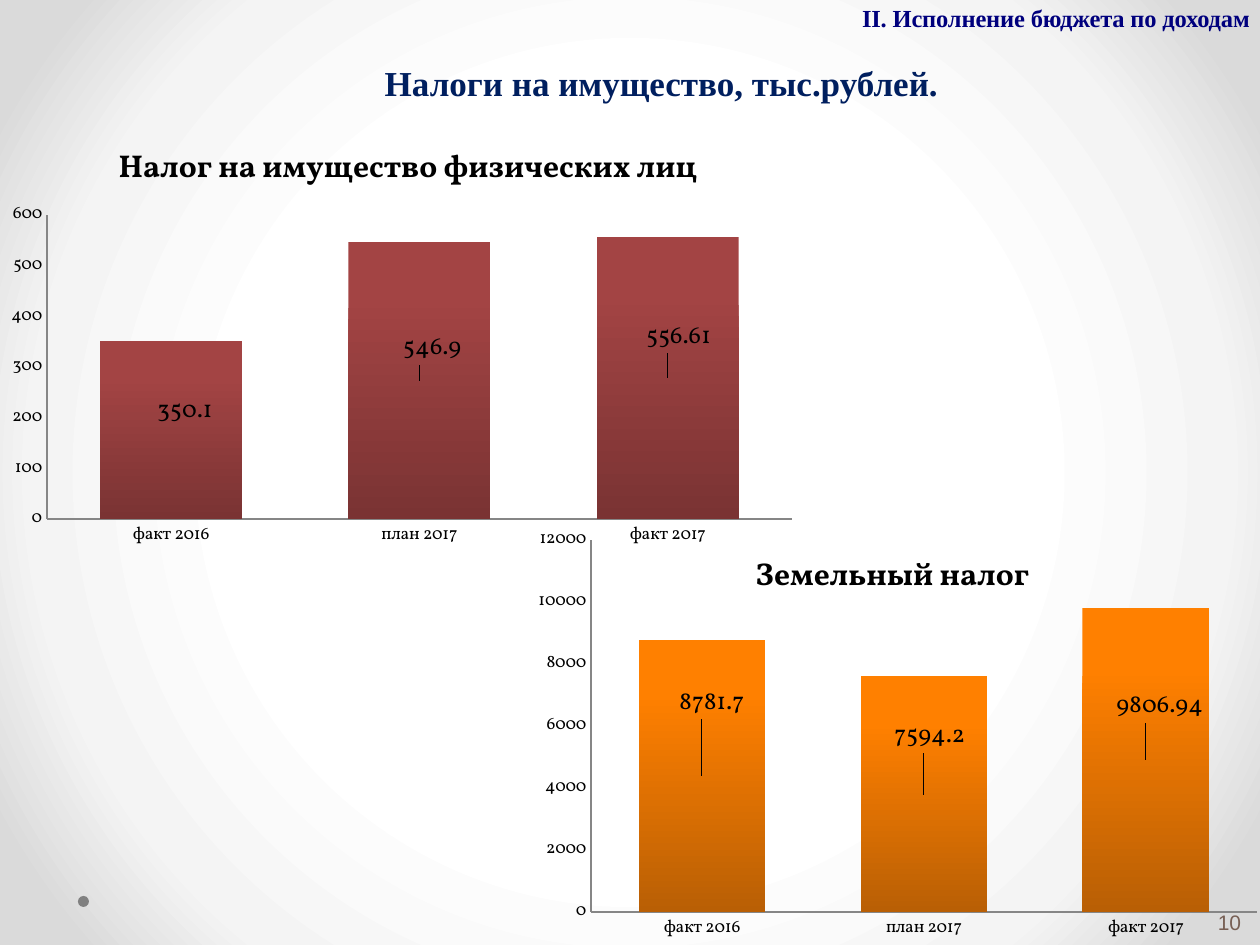
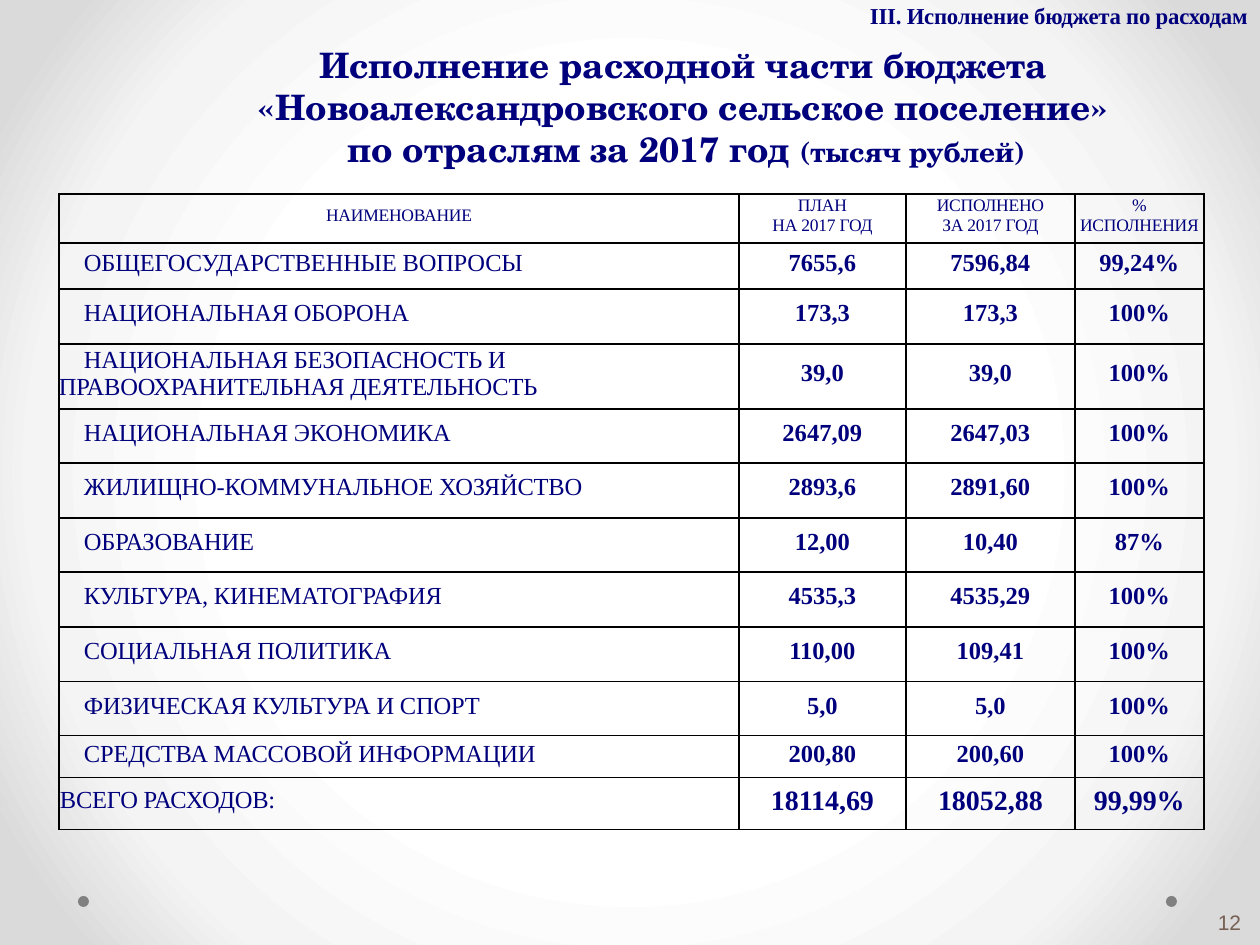
from dataclasses import dataclass

from pptx import Presentation
from pptx.chart.data import CategoryChartData
from pptx.dml.color import RGBColor
from pptx.enum.chart import XL_CHART_TYPE as ChartType, XL_LABEL_POSITION as LabelPosition
from pptx.enum.chart import XL_TICK_MARK as TickMark
from pptx.enum.shapes import MSO_SHAPE as Shape
from pptx.enum.text import MSO_ANCHOR as Anchor, MSO_AUTO_SIZE as AutoSize, PP_ALIGN as Align
from pptx.oxml import parse_xml
from pptx.oxml.ns import nsdecls
from pptx.util import Emu, Pt

TITLE_ONLY = 5


@dataclass(frozen=True)
class Theme:
    """Colours, fonts and type sizes of the deck."""
    navy: str = "00007D"
    title_blue: str = "001F5F"
    brown: str = "775F54"
    grey: str = "808080"
    axis: str = "868686"
    black: str = "000000"
    red_bar: tuple = ("A34444", "7A3333")
    orange_bar: tuple = ("FF8000", "B95F05")
    glow: tuple = ((50, "FFFFFF"), (76, "F4F4F4"), (92, "DADADA"))
    serif: str = "Times New Roman"
    school: str = "TeX Gyre Schola"
    chart_font: str = "Vollkorn"
    sans: str = "Arial"
    title: int = 20
    chart_title: int = 18
    large: int = 16
    body: int = 14
    section: int = 13
    page: int = 12
    small: int = 10


THEME = Theme()

YEARS = ("факт 2016", "план 2017", "факт 2017")
HEADINGS = ("НАИМЕНОВАНИЕ", "ПЛАН\nНА 2017 ГОД", "ИСПОЛНЕНО\nЗА 2017 ГОД", "%\nИСПОЛНЕНИЯ")
EXPENSES = (
    ("ОБЩЕГОСУДАРСТВЕННЫЕ ВОПРОСЫ", "7655,6", "7596,84", "99,24%"),
    ("НАЦИОНАЛЬНАЯ ОБОРОНА", "173,3", "173,3", "100%"),
    ("НАЦИОНАЛЬНАЯ БЕЗОПАСНОСТЬ И\nПРАВООХРАНИТЕЛЬНАЯ ДЕЯТЕЛЬНОСТЬ", "39,0", "39,0", "100%"),
    ("НАЦИОНАЛЬНАЯ ЭКОНОМИКА", "2647,09", "2647,03", "100%"),
    ("ЖИЛИЩНО-КОММУНАЛЬНОЕ ХОЗЯЙСТВО", "2893,6", "2891,60", "100%"),
    ("ОБРАЗОВАНИЕ", "12,00", "10,40", "87%"),
    ("КУЛЬТУРА, КИНЕМАТОГРАФИЯ", "4535,3", "4535,29", "100%"),
    ("СОЦИАЛЬНАЯ ПОЛИТИКА", "110,00", "109,41", "100%"),
    ("ФИЗИЧЕСКАЯ КУЛЬТУРА И СПОРТ", "5,0", "5,0", "100%"),
    ("СРЕДСТВА МАССОВОЙ ИНФОРМАЦИИ", "200,80", "200,60", "100%"),
)
TOTAL = ("ВСЕГО РАСХОДОВ:", "18114,69", "18052,88", "99,99%")
COLUMN_WIDTHS = (680, 167, 169, 129)
ROW_HEIGHTS = (49, 46, 55, 65, 54, 55, 54, 55, 55, 54, 42, 52)


def px(length):
    """Turn pixels, 126 to the inch, into EMU."""
    return Emu(round(length * 914400 / 126))


def place(box):
    """Turn a pixel box into EMU."""
    return [px(length) for length in box]


def write(para, text, size=THEME.body, color=THEME.navy, font=THEME.serif, bold=False,
          align=None, left=0, first=0, track=0):
    """Add text to a paragraph, a newline being a line break."""
    if align is not None:
        para.alignment = align
    if left or first:
        properties = para._p.get_or_add_pPr()
        properties.set("marL", str(px(left)))
        properties.set("indent", str(px(first)))
    for number, line in enumerate(text.split("\n")):
        if number:
            para.add_line_break()
        span = para.add_run()
        span.text = line
        span.font.size = Pt(size)
        span.font.name = font
        span.font.bold = bold
        span.font.color.rgb = RGBColor.from_string(color)
        if track:
            span._r.get_or_add_rPr().set("spc", str(track))


def prepare_frame(frame, wrap=False, anchor=Anchor.TOP):
    """Clear the margins of a text frame and return its first paragraph."""
    frame.margin_left = frame.margin_right = frame.margin_top = frame.margin_bottom = 0
    frame.auto_size = AutoSize.NONE
    frame.word_wrap = wrap
    frame.vertical_anchor = anchor
    return frame.paragraphs[0]


def add_label(page, box, text, **style):
    """Add a one-line text box."""
    write(prepare_frame(page.shapes.add_textbox(*place(box)).text_frame), text, **style)


def place_title(page, box, wrap=False):
    """Move the title placeholder and return its text frame."""
    title = page.shapes.title
    title.left, title.top, title.width, title.height = place(box)
    prepare_frame(title.text_frame, wrap, Anchor.BOTTOM)
    return title.text_frame


def paint_background(master):
    """Give the master a round glow."""
    master.background.fill.gradient()
    old = master.element.xpath("p:cSld/p:bg/p:bgPr/a:gradFill")[0]
    stops = "".join(f'<a:gs pos="{at * 1000}"><a:srgbClr val="{color}"/></a:gs>'
                    for at, color in THEME.glow)
    glow = parse_xml(f'<a:gradFill {nsdecls("a")} rotWithShape="1"><a:gsLst>{stops}</a:gsLst>'
                     '<a:path path="circle"><a:fillToRect l="50000" t="50000" r="50000" '
                     'b="50000"/></a:path></a:gradFill>')
    old.getparent().replace(old, glow)


def add_page(deck, section, section_box, section_size, number):
    """Add a slide with its section name, corner dots and page number."""
    page = deck.slides.add_slide(deck.slide_layouts[TITLE_ONLY])
    for left in (1166, 78):
        dot = page.shapes.add_shape(Shape.OVAL, *place((left, 896, 11, 11)))
        dot.shadow.inherit = False
        dot.fill.solid()
        dot.fill.fore_color.rgb = RGBColor.from_string(THEME.grey)
        dot.line.fill.background()
    add_label(page, section_box, section, size=section_size, bold=True, track=-10)
    add_label(page, (1218, 910, 26, 29), number, size=THEME.page, color=THEME.brown,
              font=THEME.sans, track=-10)
    return page


def set_layout(parent, index, box, rest, inner=False):
    """Give a chart part a manual layout in fractions of the chart."""
    for old in parent.xpath("c:layout"):
        parent.remove(old)
    keys = ("x", "y", "w", "h")
    fractions = [length / box[2 + number % 2] for number, length in enumerate(rest)]
    target = '<c:layoutTarget val="inner"/>' if inner else ""
    modes = "" if parent.tag.endswith("dLbl") else '<c:xMode val="edge"/><c:yMode val="edge"/>'
    values = "".join(f'<c:{key} val="{value:.4f}"/>' for key, value in zip(keys, fractions))
    parent.insert(index, parse_xml(f'<c:layout {nsdecls("c")}><c:manualLayout>{target}{modes}'
                                   f'{values}</c:manualLayout></c:layout>'))


def style_axis(axis):
    """Show an axis as a plain grey line."""
    axis.has_major_gridlines = False
    axis.major_tick_mark = axis.minor_tick_mark = TickMark.NONE
    axis.format.line.color.rgb = RGBColor.from_string(THEME.axis)
    axis.format.line.width = Pt(1)


def add_tax_chart(page, box, name, values, colors, step, plot, title_at, shifts):
    """Add a column chart of one tax, its parts set within the box."""
    data = CategoryChartData()
    data.categories = YEARS
    data.add_series(name, values)
    chart = page.shapes.add_chart(ChartType.COLUMN_CLUSTERED, *place(box), data).chart
    chart.has_legend = False
    chart.font.name = THEME.chart_font
    chart.font.size = Pt(THEME.small)
    chart.font.color.rgb = RGBColor.from_string(THEME.black)

    chart.has_title = True
    write(chart.chart_title.text_frame.paragraphs[0], name, size=THEME.chart_title,
          color=THEME.black, font=THEME.chart_font, bold=True)
    chart.chart_title.include_in_layout = False
    set_layout(chart.element.xpath("c:chart/c:title")[0], 1, box, title_at)
    set_layout(chart.element.xpath("c:chart/c:plotArea")[0], 0, box, plot, inner=True)

    style_axis(chart.category_axis)
    style_axis(chart.value_axis)
    chart.value_axis.minimum_scale = 0
    chart.value_axis.maximum_scale = step * 6
    chart.value_axis.major_unit = step

    bars = chart.plots[0]
    bars.gap_width = 75
    bars.vary_by_categories = False
    series = bars.series[0]
    fill = series.format.fill
    fill.gradient()
    fill.gradient_angle = 270
    for stop, position, color in zip(fill.gradient_stops, (0.2, 1), colors):
        stop.position = position
        stop.color.rgb = RGBColor.from_string(color)
    for number in range(len(values)):
        label = series.points[number].data_label
        label.font.size = Pt(THEME.body)
        label.font.name = THEME.chart_font
        label.font.color.rgb = RGBColor.from_string(THEME.black)
        label.position = LabelPosition.CENTER
    for label, shift in zip(chart.element.xpath(".//c:dLbl"), shifts):
        set_layout(label, 1, box, shift)


def style_cell(cell):
    """Clear a cell, frame it in black and return its paragraph."""
    cell.margin_left = cell.margin_right = cell.margin_top = 0
    cell.margin_bottom = px(6)
    cell.vertical_anchor = Anchor.MIDDLE
    properties = cell._tc.get_or_add_tcPr()
    for side in "LRTB":
        properties.append(parse_xml(
            f'<a:ln{side} {nsdecls("a")} w="12700"><a:solidFill><a:srgbClr val="{THEME.black}"/>'
            f'</a:solidFill></a:ln{side}>'))
    cell.fill.background()
    return cell.text_frame.paragraphs[0]


def add_expense_table(page, left, top):
    """Add the table of expenses by branch."""
    rows = (HEADINGS, *EXPENSES, TOTAL)
    box = (left, top, sum(COLUMN_WIDTHS), sum(ROW_HEIGHTS))
    table = page.shapes.add_table(len(rows), len(HEADINGS), *place(box)).table
    table.first_row = table.horz_banding = False
    for column, width in zip(table.columns, COLUMN_WIDTHS):
        column.width = px(width)
    for row, height in zip(table.rows, ROW_HEIGHTS):
        row.height = px(height)
    for row_number, texts in enumerate(rows):
        for column_number, text in enumerate(texts):
            para = style_cell(table.cell(row_number, column_number))
            if texts is HEADINGS:
                write(para, text, size=THEME.small, align=Align.CENTER, track=-10)
            elif column_number:
                size = THEME.large if texts is TOTAL else THEME.body
                write(para, text, size=size, bold=True, align=Align.CENTER)
            else:
                first = 1 if texts is TOTAL else 25
                write(para, text, align=Align.LEFT, first=first, track=-15)


def build_property_taxes(deck):
    """Build the slide with the two tax charts."""
    page = add_page(deck, "II. Исполнение бюджета по доходам", (862, 3, 397, 32),
                    THEME.body, "10")
    frame = place_title(page, (383, 59, 557, 45))
    write(frame.paragraphs[0], "Налоги на имущество, тыс.рублей.", size=THEME.title,
          color=THEME.title_blue, bold=True, align=Align.CENTER)
    add_tax_chart(page, (-5, 116, 814, 441), "Налог на имущество физических лиц",
                  (350.1, 546.9, 556.61), THEME.red_bar, 100, (52, 99, 745, 304),
                  (118, 22), ((14, -19), (13, -32), (11, -41)))
    add_tax_chart(page, (517, 525, 741, 425), "Земельный налог",
                  (8781.7, 7594.2, 9806.94), THEME.orange_bar, 2000, (74, 15, 666, 372),
                  (233, 21), ((10, -73), (6, -58), (14, -54)))


def build_expenses(deck):
    """Build the slide with the expense table."""
    page = add_page(deck, "III. Исполнение бюджета по расходам", (870, 2, 388, 30),
                    THEME.section, "12")
    frame = place_title(page, (0, 41, 1260, 129), wrap=True)
    style = dict(font=THEME.school, bold=True, align=Align.CENTER, track=-5)
    write(frame.paragraphs[0], "Исполнение расходной части бюджета "
          "«Новоалександровского сельское поселение»", size=THEME.title, left=106, **style)
    para = frame.add_paragraph()
    write(para, "по отраслям за 2017 год ", size=THEME.title, left=113, **style)
    write(para, "(тысяч рублей)", size=THEME.large, left=113, **style)
    add_expense_table(page, 59, 194)


def main():
    """Build and save the deck."""
    deck = Presentation()
    deck.slide_width, deck.slide_height = px(1260), px(945)
    paint_background(deck.slide_master)
    build_property_taxes(deck)
    build_expenses(deck)
    deck.save("out.pptx")


if __name__ == "__main__":
    main()
